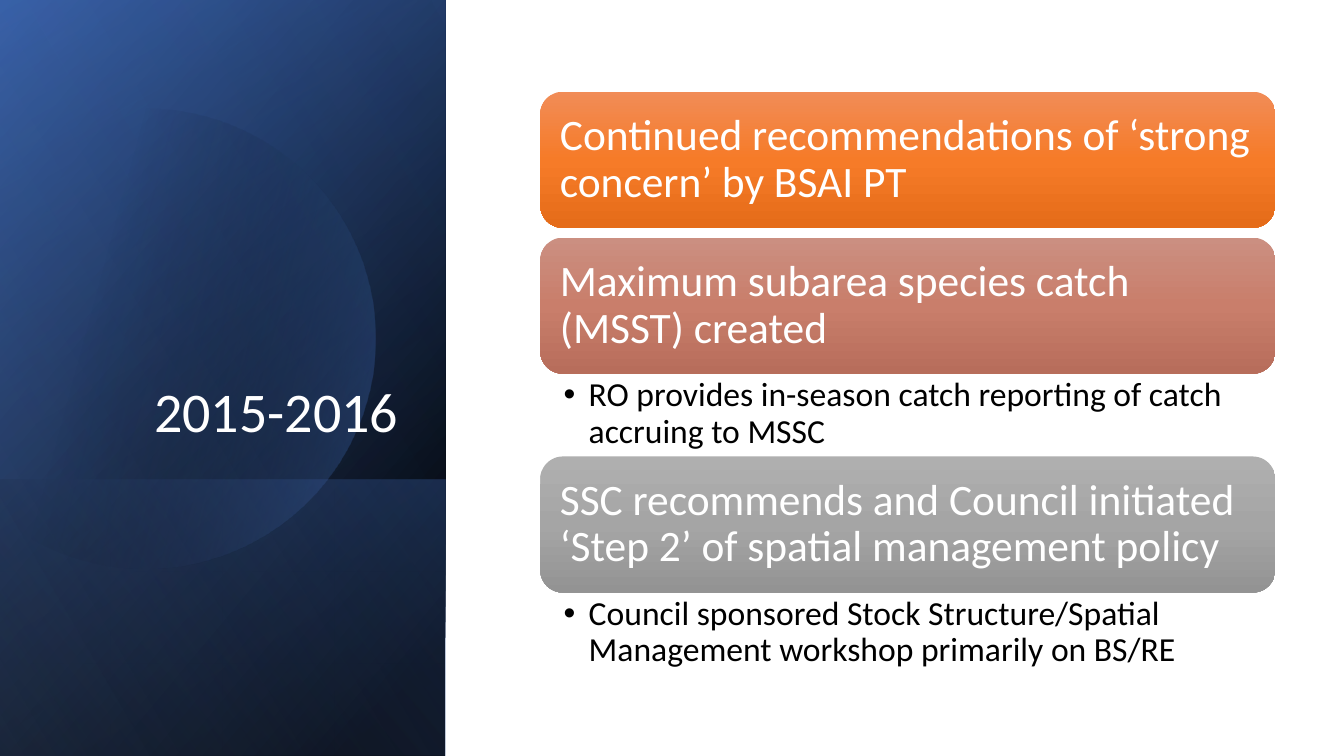
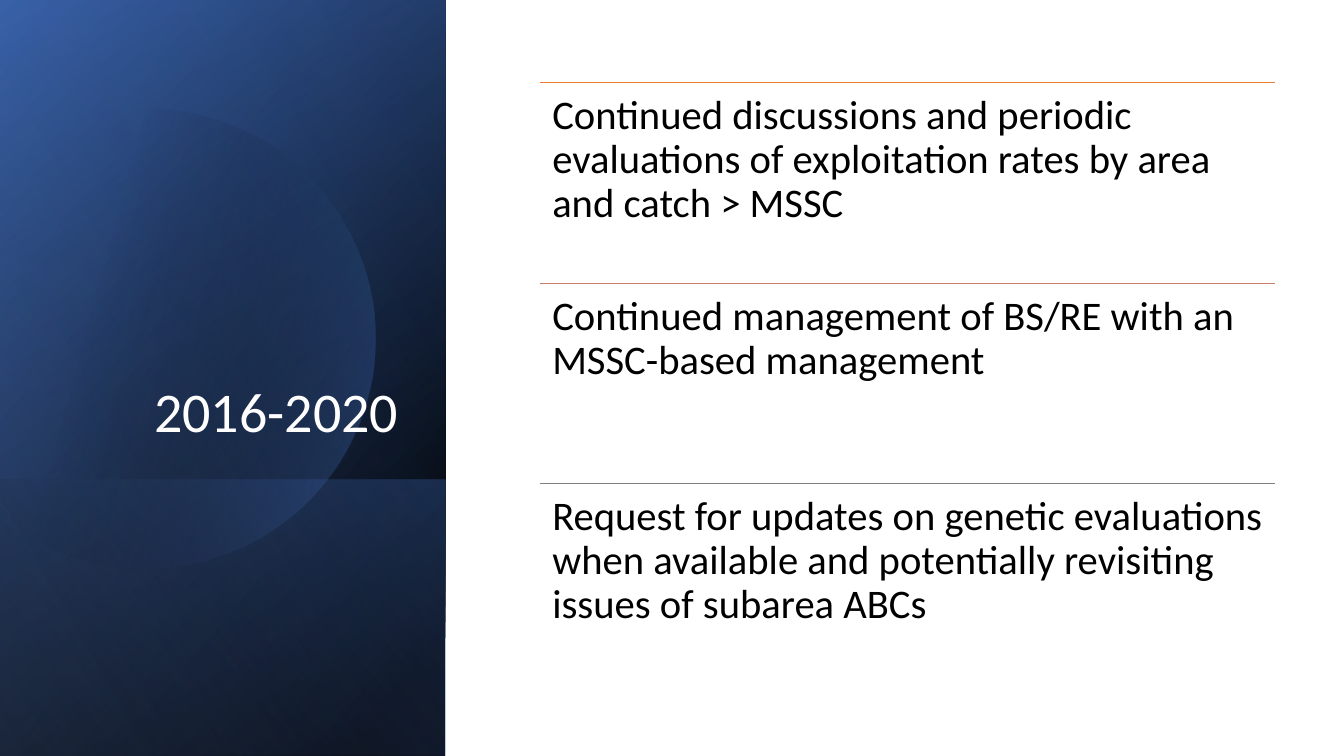
from dataclasses import dataclass
from math import acos, cos, sin

from lxml import etree
from pptx import Presentation
from pptx.dml.color import RGBColor
from pptx.enum.shapes import MSO_CONNECTOR, MSO_SHAPE
from pptx.enum.text import MSO_ANCHOR, MSO_AUTO_SIZE, PP_ALIGN
from pptx.oxml.ns import qn
from pptx.util import Inches, Pt

RECT, ROUND = MSO_SHAPE.RECTANGLE, MSO_SHAPE.ROUNDED_RECTANGLE
STRAIGHT = MSO_CONNECTOR.STRAIGHT
TOP, MIDDLE, BOTTOM = MSO_ANCHOR.TOP, MSO_ANCHOR.MIDDLE, MSO_ANCHOR.BOTTOM
LEFT, RIGHT = PP_ALIGN.LEFT, PP_ALIGN.RIGHT
FIT_NONE = MSO_AUTO_SIZE.NONE

WIDE, HIGH = Inches(13.33), Inches(7.5)
FONT = "Calibri"
BLACK, WHITE, BLUE = "000000", "FFFFFF", "4472C4"
TITLE_ONLY = 5


@dataclass(frozen=True)
class Box:
    """A frame in percent of the slide's width and height."""
    x: float
    y: float
    w: float
    h: float

    def emu(self) -> tuple[int, int, int, int]:
        return (across(self.x), down(self.y), across(self.w), down(self.h))


@dataclass(frozen=True)
class Stop:
    at: float
    tint: str
    alpha: int = 100


@dataclass(frozen=True)
class Band:
    box: Box
    stops: tuple[Stop, ...]
    angle: int


@dataclass(frozen=True)
class Card:
    text: str
    tints: tuple[str, str, str]
    note: str = ""


@dataclass(frozen=True)
class Row:
    text: str
    tint: str


# Shared side panel
FULL = Box(0, 0, 33.15, 100)
FOOT = Box(0, 63.47, 33.15, 36.53)
BASE = (
    Band(FULL, (Stop(8, BLACK), Stop(100, "2F5597")), 50),
    Band(FULL, (Stop(0, BLACK, 0), Stop(99, BLUE, 46)), 30),
    Band(FOOT, (Stop(2, BLUE, 29), Stop(100, BLACK, 30)), 130),
)
GLOSS = Band(FULL, (Stop(0, BLACK, 0), Stop(99, "8FAADC", 11)), 120)
DISC = (Stop(29, BLACK, 0), Stop(100, BLUE, 43))
TITLE = Box(4.8, 24.53, 25.58, 34.93)

# Content column
COL_X, COL_W = 40.2, 54.7
CARD_TOP, CARD_H, CARD_GAP, NOTE_H = 12.13, 18, 1.3, 10.95
ROW_TOP, ROW_H = 10.93, 26.53

CARDS = (
    Card("Continued recommendations of ‘strong concern’ by BSAI PT",
         ("F18C57", "F67B28", "E56C19")),
    Card("Maximum subarea species catch (MSST) created",
         ("CB8F81", "C97E6B", "B76D5B"),
         "RO provides in-season catch reporting of catch accruing to MSSC"),
    Card("SSC recommends and Council initiated ‘Step 2’ of spatial management policy",
         ("AFAFAF", "A5A5A5", "939393"),
         "Council sponsored Stock Structure/Spatial Management workshop primarily on BS/RE"),
)
ROWS = (
    Row("Continued discussions and periodic evaluations of exploitation rates "
        "by area and catch > MSSC", "ED7D31"),
    Row("Continued management of BS/RE with an MSSC-based management", "C97E6B"),
    Row("Request for updates on genetic evaluations when available and "
        "potentially revisiting issues of subarea ABCs", "808080"),
)


def across(share: float) -> int:
    return round(WIDE * share / 100)


def down(share: float) -> int:
    return round(HIGH * share / 100)


def rgb(tint: str) -> RGBColor:
    return RGBColor.from_string(tint)


def blend(shape, stops: tuple[Stop, ...], angle: int) -> None:
    """Give a shape a linear gradient, with no line and no shadow."""
    shape.shadow.inherit = False
    shape.line.fill.background()
    shape.fill.background()
    props = shape.element.spPr
    grad = etree.Element(qn("a:gradFill"), rotWithShape="1")
    group = etree.SubElement(grad, qn("a:gsLst"))
    for stop in stops:
        mark = etree.SubElement(group, qn("a:gs"), pos=str(round(stop.at * 1000)))
        tint = etree.SubElement(mark, qn("a:srgbClr"), val=str(rgb(stop.tint)))
        if stop.alpha < 100:
            etree.SubElement(tint, qn("a:alpha"), val=str(stop.alpha * 1000))
    etree.SubElement(grad, qn("a:lin"), ang=str(angle * 60000), scaled="0")
    props.replace(props.find(qn("a:noFill")), grad)


def write(shape, text: str, *, size: float, tint: str = BLACK, align=LEFT,
          anchor=TOP, pads: tuple[float, ...] = (7.2, 3.6, 7.2, 3.6),
          bullet: bool = False) -> None:
    """Set a shape's text; pads are left, top, right, bottom in points."""
    frame = shape.text_frame
    frame.word_wrap = True
    frame.auto_size = FIT_NONE
    frame.vertical_anchor = anchor
    (frame.margin_left, frame.margin_top,
     frame.margin_right, frame.margin_bottom) = map(Pt, pads)
    para = frame.paragraphs[0]
    para.alignment = align
    para.line_spacing = 0.9
    run = para.add_run()
    run.text = text
    run.font.name = FONT
    run.font.size = Pt(size)
    run.font.color.rgb = rgb(tint)
    if bullet:
        props = para._p.get_or_add_pPr()
        props.set("marL", str(Inches(0.25)))
        props.set("indent", str(-Inches(0.25)))
        etree.SubElement(props, qn("a:buFont"), typeface="Arial")
        etree.SubElement(props, qn("a:buChar"), char="•")


def add_text(slide, box: Box, text: str, **style) -> None:
    write(slide.shapes.add_textbox(*box.emu()), text, **style)


def add_band(slide, band: Band) -> None:
    """Draw a mirrored band, turned by a quarter to fill its box."""
    x, y, w, h = band.box.emu()
    shape = slide.shapes.add_shape(
        RECT, x + (w - h) // 2, y + (h - w) // 2, h, w)
    shape.rotation = 90
    shape.element.spPr.find(qn("a:xfrm")).set("flipH", "1")
    blend(shape, band.stops, band.angle)


def add_disc(slide) -> None:
    """Draw a disc cut off by the slide's left edge."""
    mid_x, mid_y, radius = across(10.8), down(44.8), down(30.4)
    end, steps = acos(-mid_x / radius), 120
    turns = [end * (2 * i / steps - 1) for i in range(steps + 1)]
    dots = [(round(mid_x + radius * cos(t)), round(mid_y + radius * sin(t)))
            for t in turns]
    pen = slide.shapes.build_freeform(*dots[0])
    pen.add_line_segments(dots[1:], close=True)
    blend(pen.convert_to_shape(), DISC, 15)


def add_page(deck, name: str):
    """Add a slide with the side panel and its title."""
    slide = deck.slides.add_slide(deck.slide_layouts[TITLE_ONLY])
    for band in BASE:
        add_band(slide, band)
    add_disc(slide)
    add_band(slide, GLOSS)
    title = slide.shapes.title
    title.left, title.top, title.width, title.height = TITLE.emu()
    write(title, name, size=40, tint=WHITE, align=RIGHT, anchor=BOTTOM)
    title.element.getparent().append(title.element)  # bring to front
    return slide


def add_cards(slide, cards: tuple[Card, ...]) -> None:
    y = CARD_TOP
    for card in cards:
        box = Box(COL_X, y, COL_W, CARD_H)
        shape = slide.shapes.add_shape(ROUND, *box.emu())
        blend(shape, tuple(Stop(50 * i, t) for i, t in enumerate(card.tints)), 90)
        write(shape, card.text, size=31, tint=WHITE, anchor=MIDDLE, pads=(9.3,) * 4)
        y += CARD_H
        if card.note:
            add_text(slide, Box(COL_X, y, COL_W, NOTE_H), card.note, size=24,
                     pads=(16.6, 2.9, 17.3, 2.9), bullet=True)
        y += NOTE_H if card.note else CARD_GAP


def add_rows(slide, rows: tuple[Row, ...]) -> None:
    for i, row in enumerate(rows):
        box = Box(COL_X, ROW_TOP + i * ROW_H, COL_W, ROW_H)
        x, y, w, _ = box.emu()
        rule = slide.shapes.add_connector(STRAIGHT, x, y, x + w, y)
        rule.line.color.rgb = rgb(row.tint)
        rule.line.width = Pt(0.5)
        etree.SubElement(rule.element.spPr, qn("a:effectLst"))
        add_text(slide, box, row.text, size=29, pads=(8.6,) * 4)


def main() -> None:
    deck = Presentation()
    deck.slide_width, deck.slide_height = WIDE, HIGH
    add_cards(add_page(deck, "2015-2016"), CARDS)
    add_rows(add_page(deck, "2016-2020"), ROWS)
    deck.save("out.pptx")


if __name__ == "__main__":
    main()
